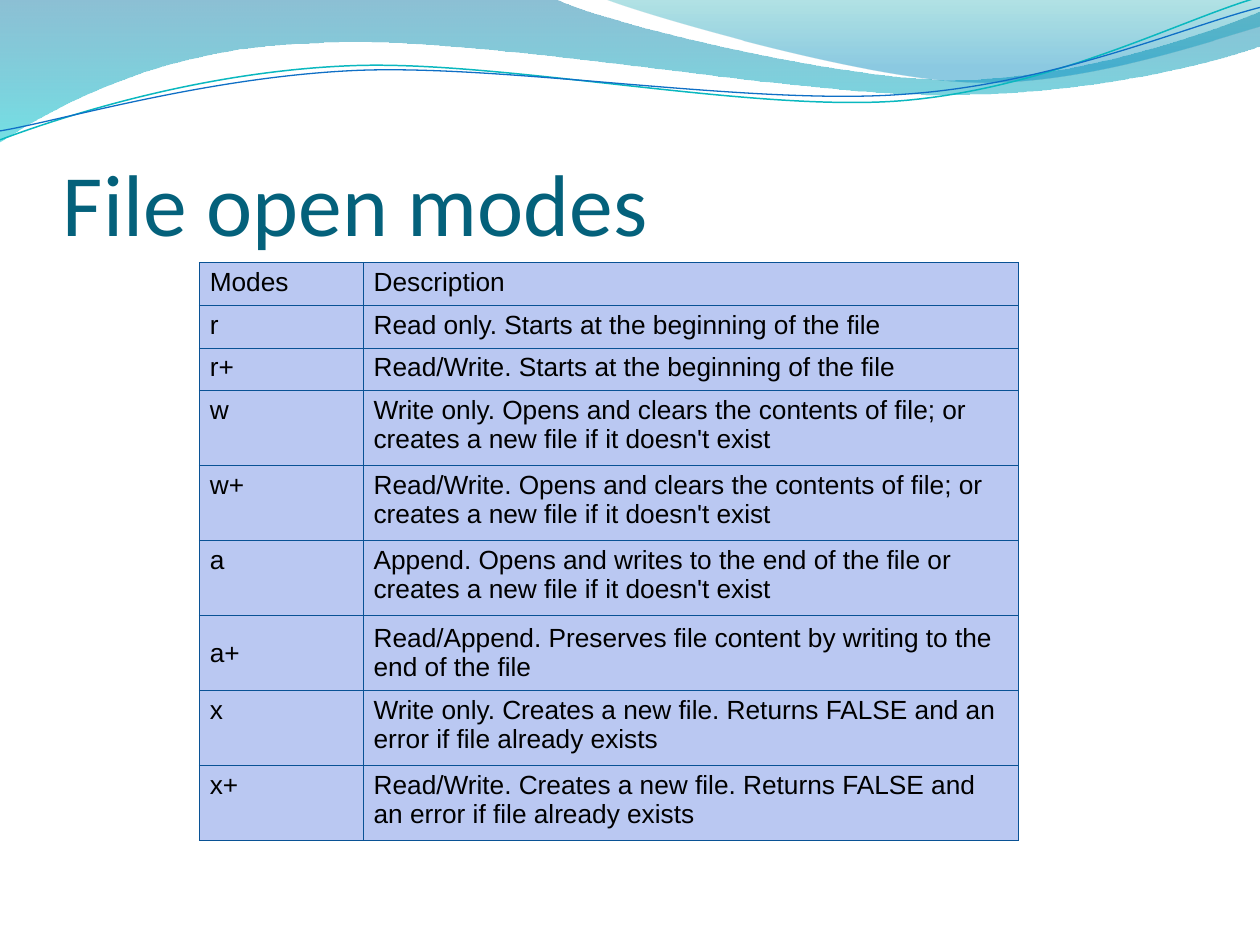
from collections import namedtuple
from dataclasses import dataclass

from lxml.etree import SubElement
from pptx import Presentation
from pptx.dml.color import RGBColor
from pptx.enum.text import MSO_ANCHOR
from pptx.oxml.ns import qn
from pptx.util import Cm, Pt

Box = namedtuple("Box", "left top width height")


@dataclass(frozen=True)
class Theme:
    title_color: str = "04617B"
    title_font: str = "Calibri"
    title_size: float = 50
    table_color: str = "000000"
    table_font: str = "Arial"
    table_size: float = 15
    cell_fill: str = "BAC8F2"
    border: str = "095295"
    border_width: float = 0.75
    # Gradient stops: position, colour, opacity in percent
    wide_wave: tuple = ((0, "0074A1", 45), (100, "00C6CF", 55))
    corner_wave: tuple = ((0, "00A1A9", 30), (80, "008BBF", 45))
    teal_line: tuple = ("0AB8BF", 0.85)
    blue_line: tuple = ("0F6FC6", 0.75)


THEME = Theme()

# Each outline is a start point followed by segments in centimetres:
# one point is a straight line, three points are a Bézier curve.
WIDE_WAVE = [
    (0, 0),
    [(11.18, -0.03)],
    [(12.09, 0.43), (16.87, 1.6), (19.25, 1.6)],
    [(21.67, 1.6), (24.33, 0.66), (25.4, 0.23)],
    [(25.43, 0.91)],
    [(24.97, 1.12), (22.1, 1.93), (18.95, 1.91)],
    [(15.8, 1.91), (9.7, 0.71), (6.53, 0.86)],
    [(3.28, 0.91), (1.17, 2.11), (-0.03, 2.87)],
]
CORNER_WAVE = [
    (12.17, -0.03),
    [(12.93, 0.28), (17.32, 1.57), (19.53, 1.65)],
    [(21.74, 1.75), (24.41, 0.81), (25.4, 0.53)],
    [(25.4, 0)],
]
# The two lines are listed before they are turned by LINE_ROTATION.
LINE_ROTATION = 357.3
TEAL_LINE = [
    (-0.05, 2.22),
    [(1.19, 1.82), (4.02, 1.04), (7.05, 1.06)],
    [(10.05, 1.07), (15.02, 2.37), (18.08, 2.29)],
    [(21.13, 2.2), (23.87, 0.91), (25.41, 0.55)],
]
BLUE_LINE = [
    (-0.04, 2.04),
    [(1.16, 1.9), (4.18, 1.15), (7.2, 1.16)],
    [(10.25, 1.18), (15.13, 2.25), (18.19, 2.16)],
    [(21.21, 2.1), (23.93, 1.06), (25.45, 0.75)],
]

MODES = [
    ("Modes", "Description"),
    ("r", "Read only. Starts at the beginning of the file"),
    ("r+", "Read/Write. Starts at the beginning of the file"),
    ("w", "Write only. Opens and clears the contents of file; or creates a new file if it doesn't exist"),
    ("w+", "Read/Write. Opens and clears the contents of file; or creates a new file if it doesn't exist"),
    ("a", "Append. Opens and writes to the end of the file or creates a new file if it doesn't exist"),
    ("a+", "Read/Append. Preserves file content by writing to the end of the file"),
    ("x", "Write only. Creates a new file. Returns FALSE and an error if file already exists"),
    ("x+", "Read/Write. Creates a new file. Returns FALSE and an error if file already exists"),
]
ONE_LINE_ROWS = 3
CENTERED_MODE = "a+"


def add_outline(page, box, outline, close):
    """Build a freeform through the segment ends, then bend its curves."""
    start, *segments = [
        [(Cm(box.left + x), Cm(box.top + y)) for x, y in segment]
        for segment in ([outline[0]], *outline[1:])
    ]
    builder = page.shapes.build_freeform(*start[0])
    builder.add_line_segments([segment[-1] for segment in segments], close=close)
    shape = builder.convert_to_shape()
    shape.shadow.inherit = False
    straight_lines = list(shape.element.spPr.iter(qn("a:lnTo")))
    for line, segment in zip(straight_lines, segments):
        if len(segment) == 3:
            line.tag = qn("a:cubicBezTo")
            line.clear()
            for x, y in segment:
                SubElement(line, qn("a:pt"), x=str(x - shape.left), y=str(y - shape.top))
    return shape


def add_wave(page, box, outline, stops):
    shape = add_outline(page, box, outline, close=True)
    shape.line.fill.background()
    shape.fill.gradient()
    shape.fill.gradient_angle = 270
    for stop, (position, color, _) in zip(shape.fill.gradient_stops, stops):
        stop.position = position / 100
        stop.color.rgb = RGBColor.from_string(color)
    colors = shape.element.spPr.iter(qn("a:srgbClr"))
    for color, (_, _, opacity) in zip(colors, stops):
        SubElement(color, qn("a:alpha"), val=str(opacity * 1000))


def add_wave_line(page, box, outline, style):
    color, width = style
    shape = add_outline(page, box, outline, close=False)
    shape.rotation = LINE_ROTATION
    shape.fill.background()
    shape.line.color.rgb = RGBColor.from_string(color)
    shape.line.width = Pt(width)


def add_header(page, box):
    add_wave(page, box, WIDE_WAVE, THEME.wide_wave)
    add_wave(page, box, CORNER_WAVE, THEME.corner_wave)
    add_wave_line(page, box, TEAL_LINE, THEME.teal_line)
    add_wave_line(page, box, BLUE_LINE, THEME.blue_line)


def style_font(font, name, size, color):
    font.name = name
    font.size = Pt(size)
    font.bold = False
    font.color.rgb = RGBColor.from_string(color)


def add_title(page, box, text):
    frame = page.shapes.add_textbox(*map(Cm, box)).text_frame
    frame.word_wrap = True
    frame.vertical_anchor = MSO_ANCHOR.BOTTOM
    frame.margin_left = frame.margin_right = frame.margin_bottom = 0
    frame.margin_top = Cm(0.13)
    para = frame.paragraphs[0]
    para.text = text
    style_font(para.font, THEME.title_font, THEME.title_size, THEME.title_color)


def add_borders(cell):
    properties = cell._tc.get_or_add_tcPr()
    for index, side in enumerate(("lnL", "lnR", "lnT", "lnB")):
        line = SubElement(properties, qn(f"a:{side}"), w=str(Pt(THEME.border_width)))
        fill = SubElement(line, qn("a:solidFill"))
        SubElement(fill, qn("a:srgbClr"), val=THEME.border)
        properties.insert(index, line)


def fill_cell(cell, text, anchor):
    cell.text = text
    cell.vertical_anchor = anchor
    cell.margin_left = cell.margin_right = Cm(0.21)
    cell.margin_top = cell.margin_bottom = Cm(0.1)
    cell.fill.solid()
    cell.fill.fore_color.rgb = RGBColor.from_string(THEME.cell_fill)
    add_borders(cell)
    style_font(cell.text_frame.paragraphs[0].font,
               THEME.table_font, THEME.table_size, THEME.table_color)


def add_modes_table(page, box):
    table = page.shapes.add_table(len(MODES), 2, *map(Cm, box)).table
    table.first_row = table.horz_banding = False
    for column, share in zip(table.columns, (0.2, 0.8)):
        column.width = Cm(box.width * share)
    short = 0.86
    tall = (box.height - ONE_LINE_ROWS * short) / (len(MODES) - ONE_LINE_ROWS)
    for index, (row, texts) in enumerate(zip(table.rows, MODES)):
        row.height = Cm(short if index < ONE_LINE_ROWS else tall)
        anchor = MSO_ANCHOR.MIDDLE if texts[0] == CENTERED_MODE else MSO_ANCHOR.TOP
        for cell, text in zip(row.cells, texts):
            fill_cell(cell, text, anchor)


def main():
    deck = Presentation()
    deck.slide_width, deck.slide_height = Cm(25.4), Cm(19.05)
    page = deck.slides.add_slide(deck.slide_layouts[6])
    add_header(page, Box(0, 0, 25.4, 2.87))
    add_title(page, Box(1.27, 1.95, 22.86, 3.18), "File open modes")
    add_modes_table(page, Box(4.02, 5.3, 16.51, 11.64))
    deck.save("out.pptx")


if __name__ == "__main__":
    main()
